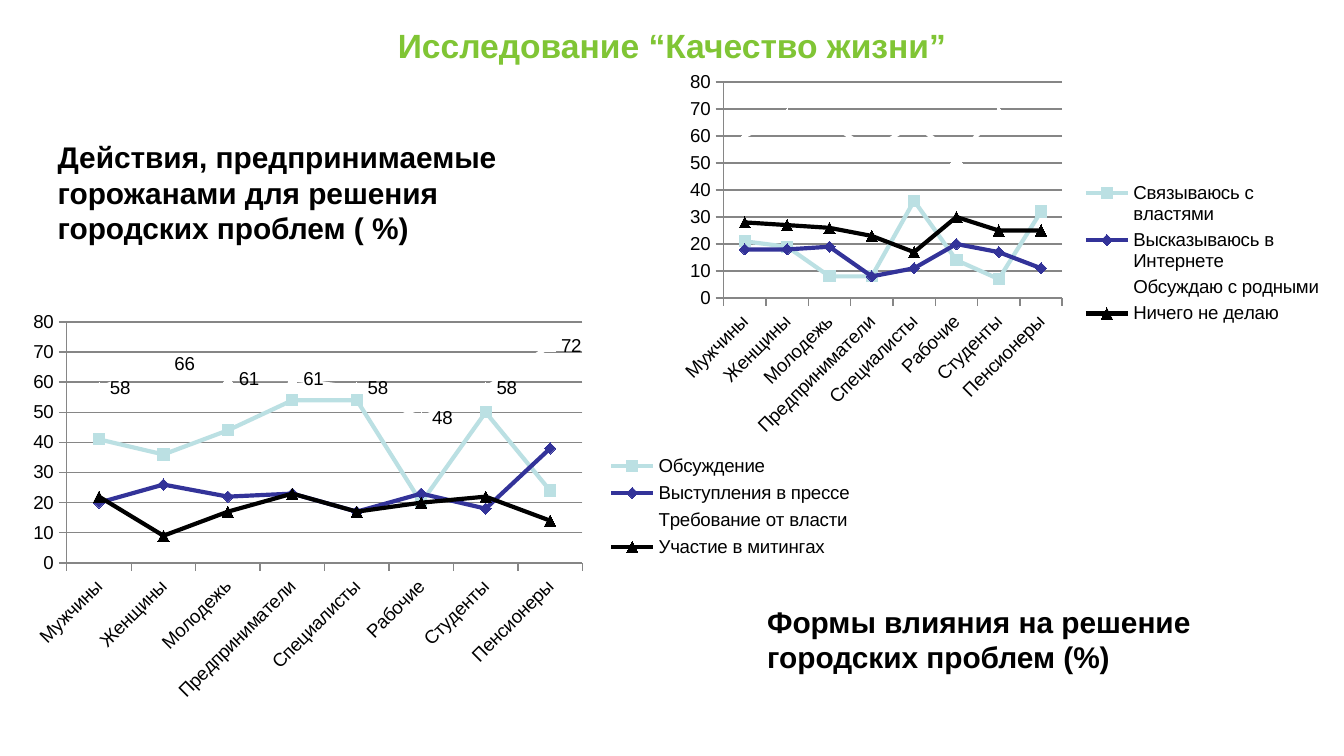
import dataclasses
import pptx
import pptx.chart.data
import pptx.dml.color
import pptx.enum.chart
import pptx.enum.text
import pptx.oxml
import pptx.oxml.ns
import pptx.util

Pt = pptx.util.Pt
Box = tuple[float, float, float, float]
FONT = "Arial"
GROUPS = ["Мужчины", "Женщины", "Молодежь", "Предприниматели",
          "Специалисты", "Рабочие", "Студенты", "Пенсионеры"]
MARK = pptx.enum.chart.XL_MARKER_STYLE
STYLES = [("BBE0E3", MARK.SQUARE), ("333399", MARK.DIAMOND),
          ("FFFFFF", MARK.TRIANGLE), ("000000", MARK.TRIANGLE)]


@dataclasses.dataclass
class Graph:
    box: Box
    plot: Box
    key: Box
    rows: dict[str, list[int]]
    label: str = ""


@dataclasses.dataclass
class Note:
    box: Box
    text: str


GRAPHS = [
    Graph((8.6, 162.7, 452.9, 217.4), (0.06, 0.045, 0.61, 0.594), (0.7, 0.36, 0.29, 0.28), {
        "Обсуждение": [41, 36, 44, 54, 54, 20, 50, 24],
        "Выступления в прессе": [20, 26, 22, 23, 17, 23, 18, 38],
        "Требование от власти": [58, 66, 61, 61, 58, 48, 58, 72],
        "Участие в митингах": [22, 9, 17, 23, 17, 20, 22, 14],
    }, "Требование от власти"),
    Graph((357.8, 33.8, 355.7, 203.8), (0.084, 0.05, 0.51, 0.568), (0.62, 0.3, 0.37, 0.4), {
        "Связываюсь с властями": [21, 19, 8, 8, 36, 14, 7, 32],
        "Высказываюсь в Интернете": [18, 18, 19, 8, 11, 20, 17, 11],
        "Обсуждаю с родными": [60, 68, 65, 54, 65, 52, 69, 64],
        "Ничего не делаю": [28, 27, 26, 23, 17, 30, 25, 25],
    }),
]
NOTES = [
    Note((23.8, 70.6, 301.7, 65.5),
         "Действия, предпринимаемые горожанами для решения городских проблем ( %)"),
    Note((403.9, 319.7, 301.7, 46.1), "Формы влияния на решение городских проблем (%)"),
]


def paint(fmt, color: str) -> None:
    fmt.solid()
    fmt.fore_color.rgb = pptx.dml.color.RGBColor.from_string(color)


def style(font, size: float, color: str = "000000", bold: bool = False) -> None:
    font.name, font.size, font.bold = FONT, Pt(size), bold
    paint(font.fill, color)


def write(frame, text: str, *, size: float, color: str = "000000", bold: bool = True,
          align=pptx.enum.text.PP_ALIGN.LEFT, anchor=pptx.enum.text.MSO_ANCHOR.TOP) -> None:
    frame.word_wrap = True
    frame.auto_size = pptx.enum.text.MSO_AUTO_SIZE.NONE
    frame.vertical_anchor = anchor
    para = frame.paragraphs[0]
    para.alignment = align
    run = para.add_run()
    run.text = text
    style(run.font, size, color, bold)


def place(node, box: Box, inner: bool = False) -> None:
    for old in node.xpath("c:layout"):
        node.remove(old)
    target = '<c:layoutTarget val="inner"/>' if inner else ""
    modes = '<c:xMode val="edge"/><c:yMode val="edge"/>'
    sides = "".join(f'<c:{k} val="{v}"/>' for k, v in zip("xywh", box))
    spot = len(node.xpath("c:legendPos"))
    node.insert(spot, pptx.oxml.parse_xml(
        f'<c:layout {pptx.oxml.ns.nsdecls("c")}><c:manualLayout>'
        f'{target}{modes}{sides}</c:manualLayout></c:layout>'))


def plot(slide, graph: Graph) -> None:
    data = pptx.chart.data.CategoryChartData()
    data.categories = GROUPS
    for name, vals in graph.rows.items():
        data.add_series(name, vals)
    kind = pptx.enum.chart.XL_CHART_TYPE.LINE_MARKERS
    chart = slide.shapes.add_chart(kind, *map(Pt, graph.box), data).chart
    chart.has_title = False
    style(chart.font, 10)
    chart.has_legend = True
    chart.legend.position = pptx.enum.chart.XL_LEGEND_POSITION.RIGHT
    chart.legend.include_in_layout = False
    style(chart.legend.font, 10)
    for axis in (chart.category_axis, chart.value_axis):
        style(axis.tick_labels.font, 10)
        axis.major_tick_mark = pptx.enum.chart.XL_TICK_MARK.OUTSIDE
        axis.minor_tick_mark = pptx.enum.chart.XL_TICK_MARK.NONE
        paint(axis.format.line.fill, "868686")
    scale = chart.value_axis
    scale.minimum_scale, scale.maximum_scale, scale.major_unit = 0, 80, 10
    scale.has_major_gridlines = True
    paint(scale.major_gridlines.format.line.fill, "868686")
    chart.plots[0].vary_by_categories = False
    for line, (color, mark) in zip(chart.plots[0].series, STYLES):
        line.smooth = False
        line.format.line.width = Pt(2.25)
        paint(line.format.line.fill, color)
        line.marker.style, line.marker.size = mark, 6
        paint(line.marker.format.fill, color)
        paint(line.marker.format.line.fill, color)
        if line.name == graph.label:
            tags = line.data_labels
            tags.show_value = True
            tags.position = pptx.enum.chart.XL_LABEL_POSITION.RIGHT
            style(tags.font, 10)
    root = chart.element
    root.xpath(".//c:catAx/c:txPr/a:bodyPr")[0].set("rot", "-2700000")
    place(root.xpath(".//c:plotArea")[0], graph.plot, True)
    place(root.xpath(".//c:legend")[0], graph.key)


def jot(slide, note: Note) -> None:
    shape = slide.shapes.add_textbox(*map(Pt, note.box))
    paint(shape.fill, "FFFFFF")
    write(shape.text_frame, note.text, size=16)


def main() -> None:
    deck = pptx.Presentation()
    deck.slide_width, deck.slide_height = Pt(720), Pt(405)
    slide = deck.slides.add_slide(deck.slide_layouts[5])
    for graph in GRAPHS:
        plot(slide, graph)
    title = slide.shapes.title
    title.left, title.top, title.width, title.height = map(Pt, (36, 10, 648, 28))
    write(title.text_frame, "Исследование “Качество жизни”", size=18, color="80C535",
          align=pptx.enum.text.PP_ALIGN.CENTER, anchor=pptx.enum.text.MSO_ANCHOR.MIDDLE)
    for note in NOTES:
        jot(slide, note)
    deck.save("out.pptx")


if __name__ == "__main__":
    main()
